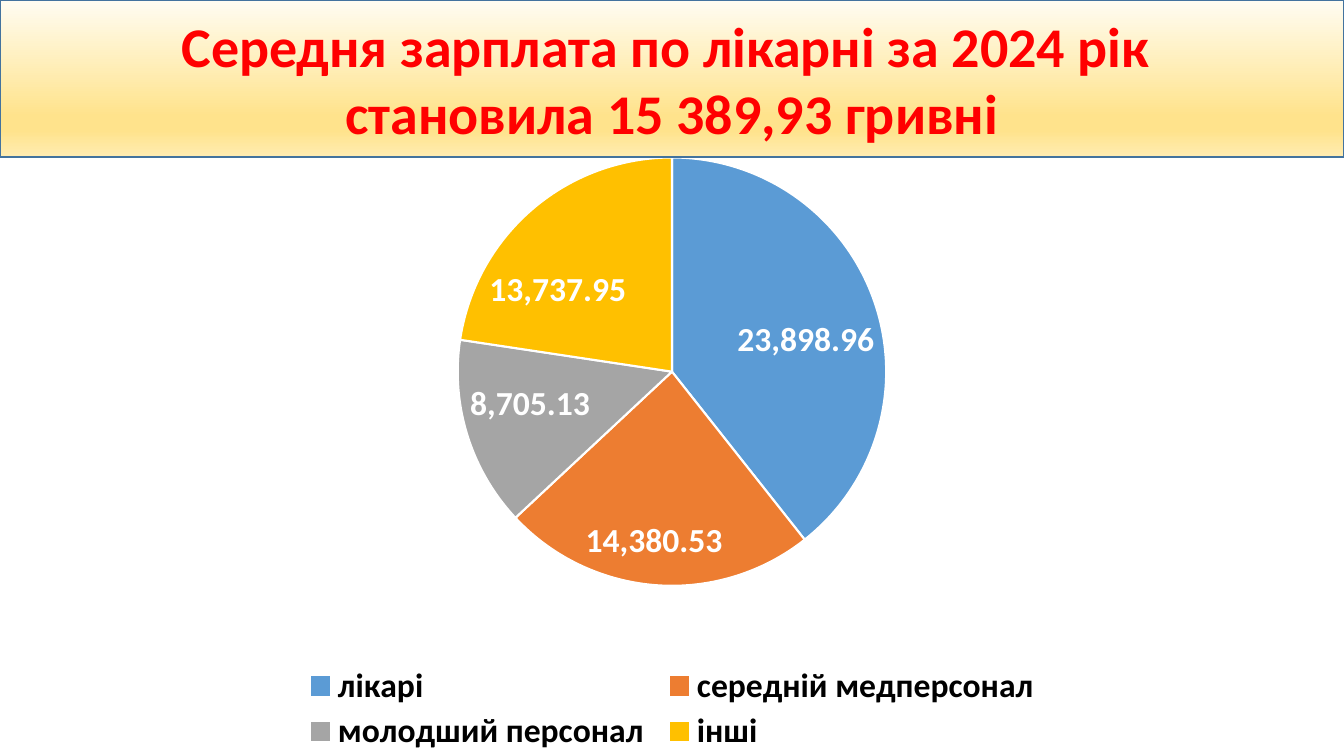
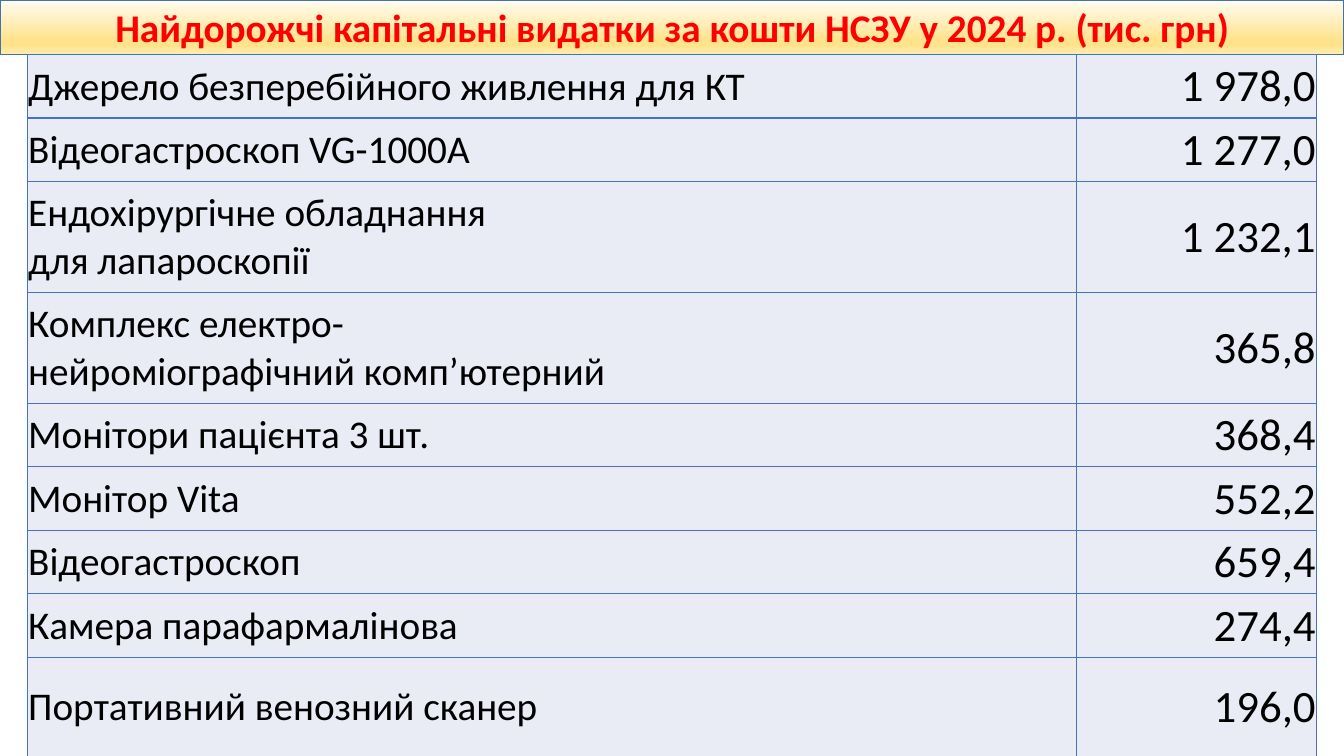
from copy import deepcopy
from typing import NamedTuple

from lxml import etree
from pptx import Presentation
from pptx.chart.chart import Chart
from pptx.chart.data import CategoryChartData
from pptx.dml.color import RGBColor
from pptx.enum.chart import XL_CHART_TYPE as ChartType
from pptx.enum.chart import XL_LABEL_POSITION as LabelPosition
from pptx.enum.chart import XL_LEGEND_POSITION as LegendPosition
from pptx.enum.shapes import MSO_SHAPE as Preset
from pptx.enum.text import MSO_ANCHOR as Anchor
from pptx.enum.text import PP_ALIGN as Align
from pptx.oxml import parse_xml
from pptx.oxml.ns import nsdecls, qn
from pptx.slide import Slide
from pptx.table import _Cell as Cell
from pptx.util import Inches, Pt

# Shared style
FONT = "Calibri"
WHITE = RGBColor(0xFF, 0xFF, 0xFF)
BLACK = RGBColor(0x00, 0x00, 0x00)
TITLE_RED = RGBColor(0xFF, 0x00, 0x00)
BAND_LINE = RGBColor(0x43, 0x73, 0x9E)
GRID_BLUE = RGBColor(0x44, 0x72, 0xC4)
CELL_FILL = RGBColor(0xE9, 0xEB, 0xF5)
BAND_GOLD = RGBColor(0xFF, 0xE3, 0x8C)
BAND_STOPS = (
    (0, RGBColor(0xFF, 0xFC, 0xF2)),
    (0.74, BAND_GOLD),
    (0.83, BAND_GOLD),
    (1, RGBColor(0xFF, 0xEC, 0xB2)),
)
SLIDE_WIDTH, SLIDE_HEIGHT = Inches(13.33), Inches(7.5)


class Salary(NamedTuple):
    staff: str
    amount: float
    color: RGBColor


class Expense(NamedTuple):
    item: str
    cost: str
    height: float = 0.63


class Frame(NamedTuple):
    """Place inside a chart, as fractions of its size."""
    x: float
    y: float
    w: float
    h: float


SALARIES = (
    Salary("лікарі", 23898.96, RGBColor(0x5B, 0x9B, 0xD5)),
    Salary("середній медперсонал", 14380.53, RGBColor(0xED, 0x7D, 0x31)),
    Salary("молодший персонал", 8705.13, RGBColor(0xA5, 0xA5, 0xA5)),
    Salary("інші", 13737.95, RGBColor(0xFF, 0xC0, 0x00)),
)
PIE_FRAME = Frame(0.34, 0.05, 0.32, 0.68)
LEGEND_FRAME = Frame(0.22, 0.85, 0.56, 0.15)

EXPENSES = (
    Expense("Джерело безперебійного живлення для КТ", "1 978,0"),
    Expense("Відеогастроскоп VG-1000A", "1 277,0"),
    Expense("Ендохірургічне обладнання \nдля лапароскопії", "1 232,1", 1.1),
    Expense("Комплекс електро-\nнейроміографічний комп’ютерний", "365,8", 1.1),
    Expense("Монітори пацієнта 3 шт.", "368,4"),
    Expense("Монітор Vita", "552,2"),
    Expense("Відеогастроскоп", "659,4"),
    Expense("Камера парафармалінова", "274,4"),
    Expense("Портативний венозний сканер", "196,0", 0.99),
)
COLUMN_WIDTHS = (10.41, 2.38)


def style_font(font, size: int, color: RGBColor, bold: bool = False) -> None:
    font.name = FONT
    font.size = Pt(size)
    font.bold = bold
    font.color.rgb = color


def add_title_band(slide: Slide, title: str, height: float, size: int) -> None:
    band = slide.shapes.add_shape(Preset.RECTANGLE, 0, 0, SLIDE_WIDTH, Inches(height))
    band.shadow.inherit = False
    band.line.color.rgb = BAND_LINE
    band.line.width = Pt(1)

    # Vertical gradient: a new one has two stops, so more are cloned
    band.fill.gradient()
    band.fill.gradient_angle = 270
    stop_list = next(band._element.iter(qn("a:gsLst")))
    while len(stop_list) < len(BAND_STOPS):
        stop_list.append(deepcopy(stop_list[0]))
    for stop, (position, color) in zip(band.fill.gradient_stops, BAND_STOPS):
        stop.position = position
        stop.color.rgb = color

    frame = band.text_frame
    frame.word_wrap = True
    frame.vertical_anchor = Anchor.MIDDLE
    heading = frame.paragraphs[0]
    heading.text = title
    heading.alignment = Align.CENTER
    style_font(heading.font, size, TITLE_RED, bold=True)


def layout_xml(place: Frame, inner: bool = False) -> etree._Element:
    target = '<c:layoutTarget val="inner"/>' if inner else ""
    modes = "".join(f'<c:{axis}Mode val="edge"/>' for axis in "xy")
    sizes = "".join(f'<c:{key} val="{value}"/>' for key, value in place._asdict().items())
    return parse_xml(
        f'<c:layout {nsdecls("c")}><c:manualLayout>{target}{modes}{sizes}'
        "</c:manualLayout></c:layout>"
    )


def place_chart_parts(chart: Chart) -> None:
    plot_area = next(chart._chartSpace.iter(qn("c:plotArea")))
    legend = next(chart._chartSpace.iter(qn("c:legend")))
    for part in (plot_area, legend):
        for automatic in part.findall(qn("c:layout")):
            part.remove(automatic)
    plot_area.insert(0, layout_xml(PIE_FRAME, inner=True))
    legend.find(qn("c:legendPos")).addnext(layout_xml(LEGEND_FRAME))


def add_salary_pie(slide: Slide) -> None:
    data = CategoryChartData(number_format="#,##0.00")
    data.categories = [salary.staff for salary in SALARIES]
    data.add_series("Series 1", [salary.amount for salary in SALARIES])
    chart = slide.shapes.add_chart(
        ChartType.PIE, 0, Inches(1.25), SLIDE_WIDTH, Inches(6.25), data
    ).chart
    chart.has_title = False
    style_font(chart.font, 10, BLACK)

    # Legend
    chart.has_legend = True
    chart.legend.position = LegendPosition.BOTTOM
    chart.legend.include_in_layout = False
    style_font(chart.legend.font, 24, BLACK, bold=True)
    place_chart_parts(chart)

    # Slices and their values
    plot = chart.plots[0]
    plot.vary_by_categories = True
    for index, salary in enumerate(SALARIES):
        slice_format = plot.series[0].points[index].format
        slice_format.fill.solid()
        slice_format.fill.fore_color.rgb = salary.color
        slice_format.line.color.rgb = WHITE
        slice_format.line.width = Pt(1.5)
    labels = plot.series[0].data_labels
    labels.show_value = True
    labels.number_format = "#,##0.00"
    labels.number_format_is_linked = False
    labels.position = LabelPosition.BEST_FIT
    style_font(labels.font, 24, WHITE, bold=True)


def fill_cell(cell: Cell, text: str, size: int, align: Align) -> None:
    cell.margin_left = cell.margin_right = cell.margin_top = Inches(0.01)
    cell.margin_bottom = 0
    cell.vertical_anchor = Anchor.MIDDLE
    properties = cell._tc.get_or_add_tcPr()
    for side in "LRTB":
        properties.append(parse_xml(
            f'<a:ln{side} {nsdecls("a")} w="{Pt(1)}"><a:solidFill>'
            f'<a:srgbClr val="{GRID_BLUE}"/></a:solidFill></a:ln{side}>'
        ))
    cell.fill.solid()
    cell.fill.fore_color.rgb = CELL_FILL
    paragraph = cell.text_frame.paragraphs[0]
    paragraph.text = text
    paragraph.alignment = align
    style_font(paragraph.font, size, BLACK)


def add_expense_table(slide: Slide) -> None:
    table = slide.shapes.add_table(
        len(EXPENSES), len(COLUMN_WIDTHS), Inches(0.27), Inches(0.54),
        Inches(sum(COLUMN_WIDTHS)), Inches(sum(expense.height for expense in EXPENSES)),
    ).table
    table.first_row = table.horz_banding = False
    for column, width in zip(table.columns, COLUMN_WIDTHS):
        column.width = Inches(width)
    for row, expense in zip(table.rows, EXPENSES):
        row.height = Inches(expense.height)
        fill_cell(row.cells[0], expense.item, 28, Align.LEFT)
        fill_cell(row.cells[1], expense.cost, 32, Align.RIGHT)


def main() -> None:
    deck = Presentation()
    deck.slide_width, deck.slide_height = SLIDE_WIDTH, SLIDE_HEIGHT
    blank = deck.slide_layouts[6]

    # Average salary
    salary_slide = deck.slides.add_slide(blank)
    add_salary_pie(salary_slide)
    add_title_band(
        salary_slide,
        "Cередня зарплата по лікарні за 2024 рік \nстановила 15 389,93 гривні",
        1.56, 40,
    )

    # Capital expenses
    expense_slide = deck.slides.add_slide(blank)
    add_title_band(
        expense_slide,
        "Найдорожчі капітальні видатки за кошти НСЗУ у 2024 р. (тис. грн)",
        0.54, 28,
    )
    add_expense_table(expense_slide)

    deck.save("out.pptx")


if __name__ == "__main__":
    main()
